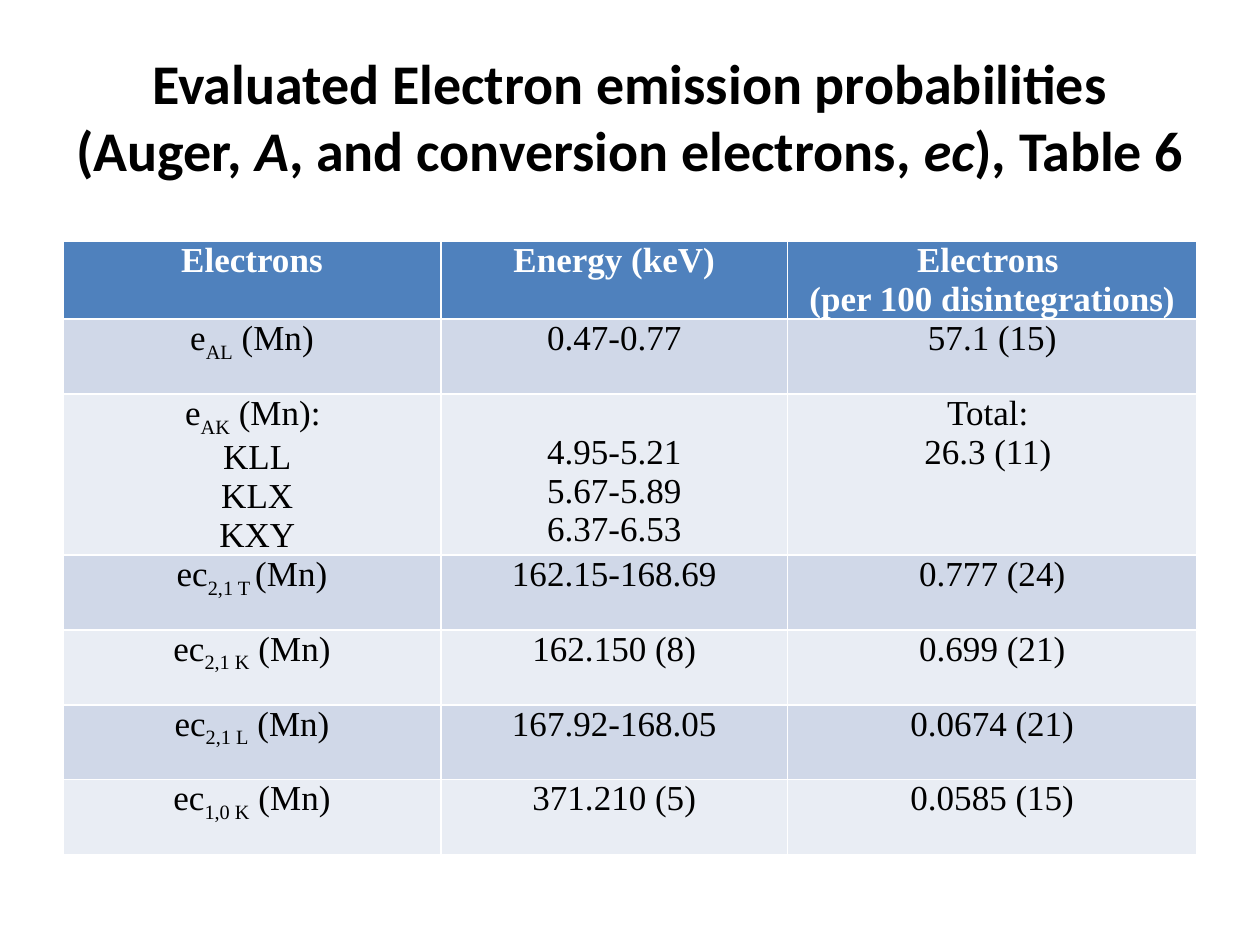
from pptx import Presentation
from pptx.dml.color import RGBColor
from pptx.enum.text import MSO_ANCHOR, PP_ALIGN
from pptx.util import Pt

BLACK = RGBColor(0x00, 0x00, 0x00)
WHITE = RGBColor(0xFF, 0xFF, 0xFF)
HEADER_BLUE = RGBColor(0x4F, 0x81, 0xBD)
BAND_DARK = RGBColor(0xD0, 0xD8, 0xE8)
BAND_LIGHT = RGBColor(0xE9, 0xED, 0xF4)

TITLE = ("Evaluated Electron emission probabilities (Auger, |A|, "
         "and conversion electrons, |ec|), Table 6")
COLUMN_WIDTHS = (216, 198, 234)
ROW_HEIGHT = 42.8
LINE_HEIGHT = 22.2
AUGER_K_ROW = 2
ROWS = (
    ("Electrons", "Energy (keV)", "Electrons \n(per 100 disintegrations)"),
    ("e|AL| (Mn)", "0.47-0.77", "57.1 (15)"),
    ("e|AK| (Mn): \nKLL\nKLX\nKXY", "4.95-5.21\n5.67-5.89\n6.37-6.53",
     "Total: \n26.3 (11) "),
    ("ec|2,1 T |(Mn)", "162.15-168.69", "0.777 (24)"),
    ("ec|2,1 K| (Mn)", "162.150 (8)", "0.699 (21)"),
    ("ec|2,1 L| (Mn)", "167.92-168.05", "0.0674 (21)"),
    ("ec|1,0 K| (Mn)", "371.210 (5)", "0.0585 (15)"),
)


def set_italic(span):
    span.font.italic = True


def set_subscript(span):
    span._r.get_or_add_rPr().set("baseline", "-25000")


class SlideBuilder:
    title_font = "Calibri"
    title_size = 32
    table_font = "Times New Roman"
    table_size = 20

    def __init__(self, slide):
        self.slide = slide

    def add_text(self, frame, text, mark, name, size, color, bold):
        for index, line in enumerate(text.split("\n")):
            para = frame.add_paragraph() if index else frame.paragraphs[0]
            para.alignment = PP_ALIGN.CENTER
            para.font.name = name
            para.font.size = Pt(size)
            para.font.color.rgb = color
            para.font.bold = bold
            for position, part in enumerate(line.split("|")):
                span = para.add_run()
                span.text = part
                if position % 2:
                    mark(span)

    def add_title(self, text, left, top, width, height):
        box = self.slide.shapes.title
        box.left, box.top = Pt(left), Pt(top)
        box.width, box.height = Pt(width), Pt(height)
        box.text_frame.vertical_anchor = MSO_ANCHOR.MIDDLE
        self.add_text(box.text_frame, text, set_italic,
                      self.title_font, self.title_size, BLACK, True)

    def add_table(self, rows, left, top, widths, row_height):
        table = self.slide.shapes.add_table(
            len(rows), len(widths), Pt(left), Pt(top),
            Pt(sum(widths)), Pt(row_height * len(rows))).table
        for column, width in zip(table.columns, widths):
            column.width = Pt(width)
        for row_index, row in enumerate(rows):
            header = row_index == 0
            band = BAND_DARK if row_index % 2 else BAND_LIGHT
            for column_index, text in enumerate(row):
                cell = table.cell(row_index, column_index)
                cell.margin_left = cell.margin_right = Pt(5)
                cell.margin_top = cell.margin_bottom = 0
                cell.fill.solid()
                cell.fill.fore_color.rgb = HEADER_BLUE if header else band
                self.add_text(cell.text_frame, text, set_subscript,
                              self.table_font, self.table_size,
                              WHITE if header else BLACK, header)
        return table


def main():
    deck = Presentation()
    deck.slide_width, deck.slide_height = Pt(720), Pt(540)
    page = SlideBuilder(deck.slides.add_slide(deck.slide_layouts[5]))
    page.add_title(TITLE, 36, 12, 648, 108)
    table = page.add_table(ROWS, 36, 138, COLUMN_WIDTHS, ROW_HEIGHT)
    for para in table.cell(AUGER_K_ROW, 0).text_frame.paragraphs:
        para._p.get_or_add_pPr().set("indent", str(Pt(6)))
    table.cell(AUGER_K_ROW, 1).margin_top = Pt(LINE_HEIGHT)
    deck.save("out.pptx")


if __name__ == "__main__":
    main()
